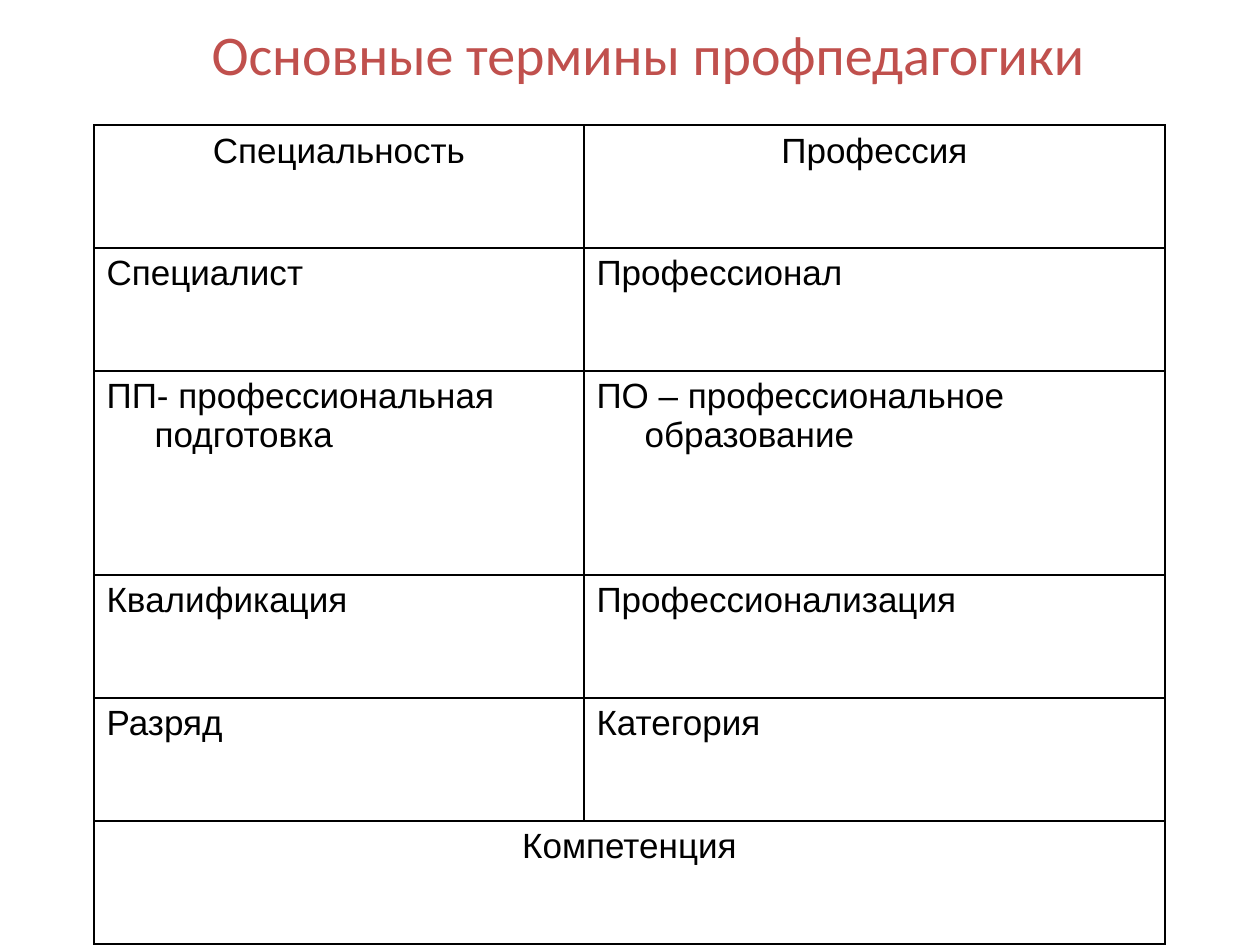
import pptx
import pptx.util
import pptx.dml.color
import pptx.enum.text
import pptx.oxml
import pptx.oxml.ns

PX_PER_INCH = 126
COLORS = {"title": "C0504D", "text": "000000", "border": "000000"}
ALIGN = pptx.enum.text.PP_ALIGN

COL_WIDTHS = [490, 581]
ROW_HEIGHTS = [123, 123, 204, 123, 123, 123]
TERMS = [
    ("Специальность", "Профессия"),
    ("Специалист", "Профессионал"),
    ("ПП- профессиональная подготовка", "ПО – профессиональное образование"),
    ("Квалификация", "Профессионализация"),
    ("Разряд", "Категория"),
    ("Компетенция",),
]


def px(n):
    return pptx.util.Emu(round(n * 914400 / PX_PER_INCH))


def add_run(p, text, size, font, color):
    r = p.add_run()
    r.text = text
    r.font.size = pptx.util.Pt(size)
    r.font.name = font
    r.font.color.rgb = pptx.dml.color.RGBColor.from_string(COLORS[color])


def set_title(slide, text):
    sp = slide.shapes.title
    sp.left, sp.top, sp.width, sp.height = px(113), px(0), px(1071), px(106)
    tf = sp.text_frame
    tf.word_wrap = True
    tf.vertical_anchor = pptx.enum.text.MSO_ANCHOR.MIDDLE
    p = tf.paragraphs[0]
    p.alignment = ALIGN.CENTER
    add_run(p, text, 32, "Calibri", "title")


def format_cell(cell):
    cell.fill.background()
    tcPr = cell._tc.get_or_add_tcPr()
    # Borders come before the fill in the cell properties
    for i, side in enumerate(("lnL", "lnR", "lnT", "lnB")):
        tcPr.insert(i, pptx.oxml.parse_xml(
            f'<a:{side} {pptx.oxml.ns.nsdecls("a")} w="{pptx.util.Pt(1)}">'
            f'<a:solidFill><a:srgbClr val="{COLORS["border"]}"/></a:solidFill>'
            f'</a:{side}>'))


def fill_cell(cell, text, alignment):
    p = cell.text_frame.paragraphs[0]
    p.alignment = alignment
    # Hanging indent
    pPr = p._p.get_or_add_pPr()
    pPr.set("marL", str(px(48)))
    pPr.set("indent", str(-px(48)))
    add_run(p, text, 20, "Arial", "text")


def add_terms_table(slide):
    table = slide.shapes.add_table(
        len(ROW_HEIGHTS), len(COL_WIDTHS), px(94), px(125),
        px(sum(COL_WIDTHS)), px(sum(ROW_HEIGHTS))).table
    table.first_row = table.horz_banding = False
    for col, width in zip(table.columns, COL_WIDTHS):
        col.width = px(width)
    for row, height in zip(table.rows, ROW_HEIGHTS):
        row.height = px(height)
    for cell in table.iter_cells():
        format_cell(cell)

    # The closing term spans both columns
    last = len(TERMS) - 1
    table.cell(last, 0).merge(table.cell(last, 1))
    for i, terms in enumerate(TERMS):
        alignment = ALIGN.CENTER if i in (0, last) else ALIGN.LEFT
        for j, term in enumerate(terms):
            fill_cell(table.cell(i, j), term, alignment)


def main():
    prs = pptx.Presentation()
    prs.slide_width, prs.slide_height = px(1260), px(945)
    slide = prs.slides.add_slide(prs.slide_layouts[5])
    set_title(slide, "Основные термины профпедагогики")
    add_terms_table(slide)
    prs.save("out.pptx")


if __name__ == "__main__":
    main()
